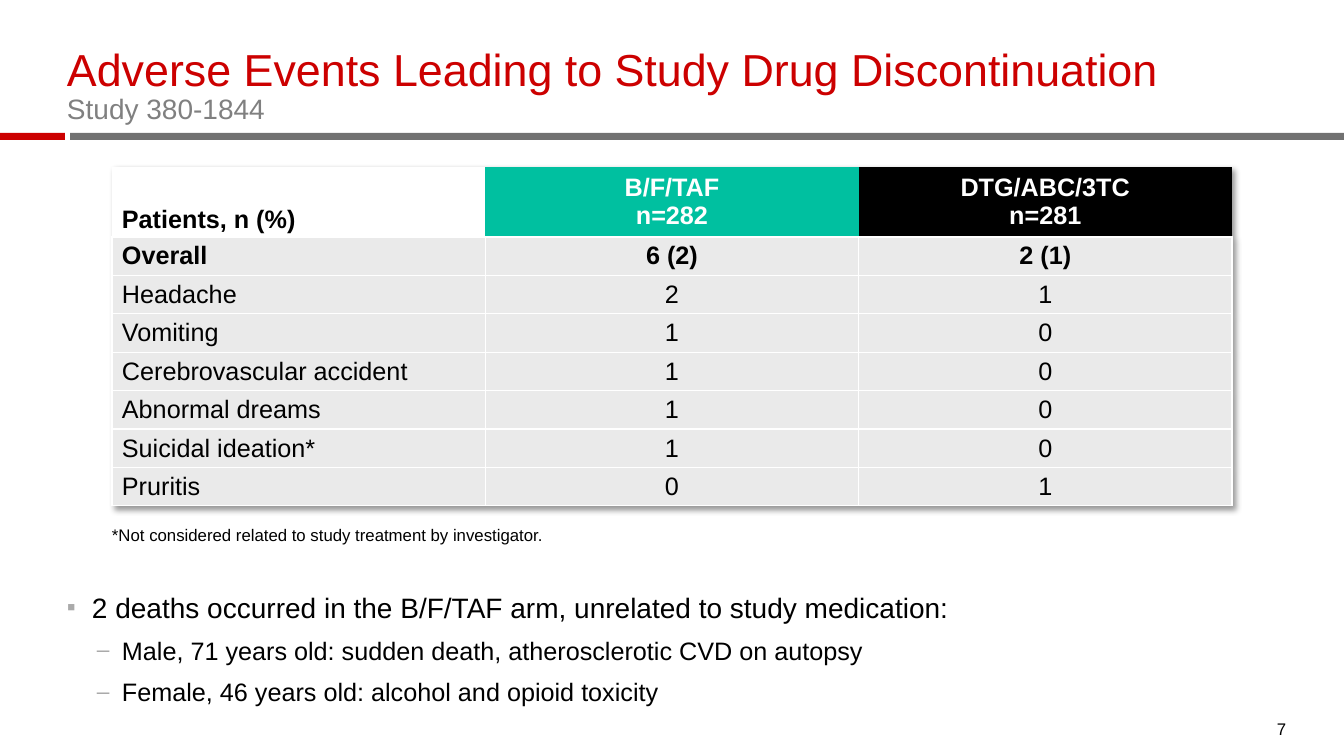
"""Build the slide on adverse events leading to discontinuation."""
from dataclasses import dataclass

from lxml.etree import SubElement
from pptx import Presentation
from pptx.dml.color import RGBColor
from pptx.enum.shapes import MSO_SHAPE
from pptx.enum.text import MSO_ANCHOR, MSO_AUTO_SIZE, PP_ALIGN
from pptx.oxml.ns import qn
from pptx.util import Emu, Pt


@dataclass(frozen=True)
class Theme:
    """Colours, font and type sizes of the slide."""
    face: str = "Arial"
    red: str = "CC0000"
    bar: str = "717171"
    muted: str = "808080"
    mark: str = "AAAAAA"
    teal: str = "00C0A0"
    black: str = "000000"
    white: str = "FFFFFF"
    band: str = "EAEAEA"
    head: int = 32
    lead: int = 20
    text: int = 18
    note: int = 12


THEME = Theme()
PLAIN = "{2D5ABB26-0587-4C30-8999-92F81FD0307C}"
TITLE = ["Adverse Events Leading to Study Drug Discontinuation", "Study 380-1844"]
NOTE = "*Not considered related to study treatment by investigator."
ARMS = ["Patients, n (%)", "B/F/TAF\nn=282", "DTG/ABC/3TC\nn=281"]
EVENTS = [
    ["Overall", "6 (2)", "2 (1)"],
    ["Headache", "2", "1"],
    ["Vomiting", "1", "0"],
    ["Cerebrovascular accident", "1", "0"],
    ["Abnormal dreams", "1", "0"],
    ["Suicidal ideation*", "1", "0"],
    ["Pruritis", "0", "1"],
]
DEATHS = [
    (0, "2 deaths occurred in the B/F/TAF arm, unrelated to study medication:"),
    (1, "Male, 71 years old: sudden death, atherosclerotic CVD on autopsy"),
    (1, "Female, 46 years old: alcohol and opioid toxicity"),
]


def px(count):
    """Turn pixels into EMU, with 1344 px across the slide."""
    return Emu(round(count * 12192000 / 1344))


def place(shape, box):
    """Move a shape to a box given in px."""
    shape.left, shape.top, shape.width, shape.height = map(px, box)


def setup(frame, anchor):
    """Give a text frame no insets, wrapping and a fixed size."""
    frame.margin_left = frame.margin_right = 0
    frame.margin_top = frame.margin_bottom = 0
    frame.word_wrap = True
    frame.auto_size = MSO_AUTO_SIZE.NONE
    frame.vertical_anchor = anchor


def style(para, size, color, bold=False):
    """Set the font of a paragraph and its runs."""
    for part in (para, *para.runs):
        font = part.font
        font.name, font.size, font.bold = THEME.face, Pt(size), bold
        font.color.rgb = RGBColor.from_string(color)


def tint(parent, color):
    """Add a solid fill to an XML element and return its colour."""
    fill = SubElement(parent, qn("a:solidFill"))
    return SubElement(fill, qn("a:srgbClr"), val=color)


def bullet(para, sign, left, hang):
    """Give a paragraph a grey bullet and a hanging indent."""
    props = para._p.get_or_add_pPr()
    props.set("marL", str(px(left)))
    props.set("indent", str(-px(hang)))
    color = SubElement(props, qn("a:buClr"))
    SubElement(color, qn("a:srgbClr"), val=THEME.mark)
    SubElement(props, qn("a:buSzPct"), val="90000")
    SubElement(props, qn("a:buFont"), typeface=THEME.face)
    SubElement(props, qn("a:buChar"), char=sign)


def add_bars(slide, box):
    """Draw the red and grey rule below the title."""
    left, top, width, height = box
    split, gap = 65, 5
    start = split + gap
    for x, wide, color in ((left, split, THEME.red),
                           (left + start, width - start, THEME.bar)):
        bar = slide.shapes.add_shape(MSO_SHAPE.RECTANGLE,
                                     *map(px, (x, top, wide, height)))
        bar.shadow.inherit = False
        bar.fill.solid()
        bar.fill.fore_color.rgb = RGBColor.from_string(color)
        bar.line.fill.background()


def fill_title(shape, box):
    """Write the title and the study name."""
    place(shape, box)
    frame = shape.text_frame
    setup(frame, MSO_ANCHOR.BOTTOM)
    frame.text = "\n".join(TITLE)
    looks = ((THEME.head, THEME.red), (THEME.lead, THEME.muted))
    for para, look in zip(frame.paragraphs, looks):
        para.alignment = PP_ALIGN.LEFT
        para.line_spacing = 0.9
        style(para, *look)


def fill_list(shape, box):
    """Write the list of deaths on two levels."""
    place(shape, box)
    frame = shape.text_frame
    setup(frame, MSO_ANCHOR.TOP)
    frame.text = "\n".join(line for _, line in DEATHS)
    looks = (("▪", 25, 12, THEME.lead), ("–", 55, 8, THEME.text))
    for para, (level, _) in zip(frame.paragraphs, DEATHS):
        sign, left, space, size = looks[level]
        para.level = level
        para.space_before = Pt(space)
        bullet(para, sign, left, 25)
        style(para, size, THEME.black)


def fill_note(shape, box, text):
    """Write one small line without a bullet."""
    place(shape, box)
    frame = shape.text_frame
    setup(frame, MSO_ANCHOR.BOTTOM)
    frame.text = text
    para = frame.paragraphs[0]
    para.space_before = Pt(0)
    props = para._p.get_or_add_pPr()
    props.set("marL", "0")
    props.set("indent", "0")
    SubElement(props, qn("a:buNone"))
    style(para, THEME.note, THEME.black)


def fill_cell(cell, text, row, col):
    """Write and format one table cell."""
    cell.text = text
    cell.margin_left = cell.margin_right = px(10)
    cell.margin_top = cell.margin_bottom = px(3)
    corner = row == col == 0
    cell.vertical_anchor = MSO_ANCHOR.BOTTOM if corner else MSO_ANCHOR.MIDDLE
    if row:
        for side in ("lnL", "lnR", "lnT", "lnB"):
            edge = SubElement(cell._tc.get_or_add_tcPr(), qn(f"a:{side}"),
                              w=str(Pt(1)))
            tint(edge, THEME.white)
    heads = (THEME.white, THEME.teal, THEME.black)
    cell.fill.solid()
    cell.fill.fore_color.rgb = RGBColor.from_string(
        THEME.band if row else heads[col])
    ink = THEME.black if row or corner else THEME.white
    for para in cell.text_frame.paragraphs:
        para.alignment = PP_ALIGN.CENTER if col else PP_ALIGN.LEFT
        style(para, THEME.text, ink, row < 2)


def add_grid(slide, box):
    """Add the table of events with a soft shadow."""
    rows = [ARMS, *EVENTS]
    table = slide.shapes.add_table(len(rows), len(ARMS), *map(px, box)).table
    table.first_row = table.horz_banding = False
    props = table._tbl.tblPr
    props.find(qn("a:tableStyleId")).text = PLAIN
    effect = SubElement(props, qn("a:effectLst"))
    props.insert(0, effect)
    shade = SubElement(effect, qn("a:outerShdw"), blurRad="50800",
                       dist="38100", dir="2700000", algn="tl")
    color = SubElement(shade, qn("a:srgbClr"), val=THEME.black)
    SubElement(color, qn("a:alpha"), val="40000")
    head = 70
    for row, texts in enumerate(rows):
        table.rows[row].height = px((box[3] - head) / len(EVENTS) if row else head)
        for col, text in enumerate(texts):
            fill_cell(table.cell(row, col), text, row, col)


def main():
    """Build and save the slide."""
    deck = Presentation()
    deck.slide_width, deck.slide_height = px(1344), px(756)
    slide = deck.slides.add_slide(deck.slide_layouts[3])
    title, body, note = slide.placeholders
    add_bars(slide, (0, 133, 1344, 7))
    fill_title(title, (67, 51, 1210, 75))
    fill_list(body, (67, 590, 1210, 130))
    fill_note(note, (112, 519, 1120, 26), NOTE)
    add_grid(slide, (112, 167, 1120, 339))
    page = slide.shapes.add_textbox(0, 0, 0, 0)
    fill_note(page, (1277, 721, 36, 18), "7")
    deck.save("out.pptx")


if __name__ == "__main__":
    main()
